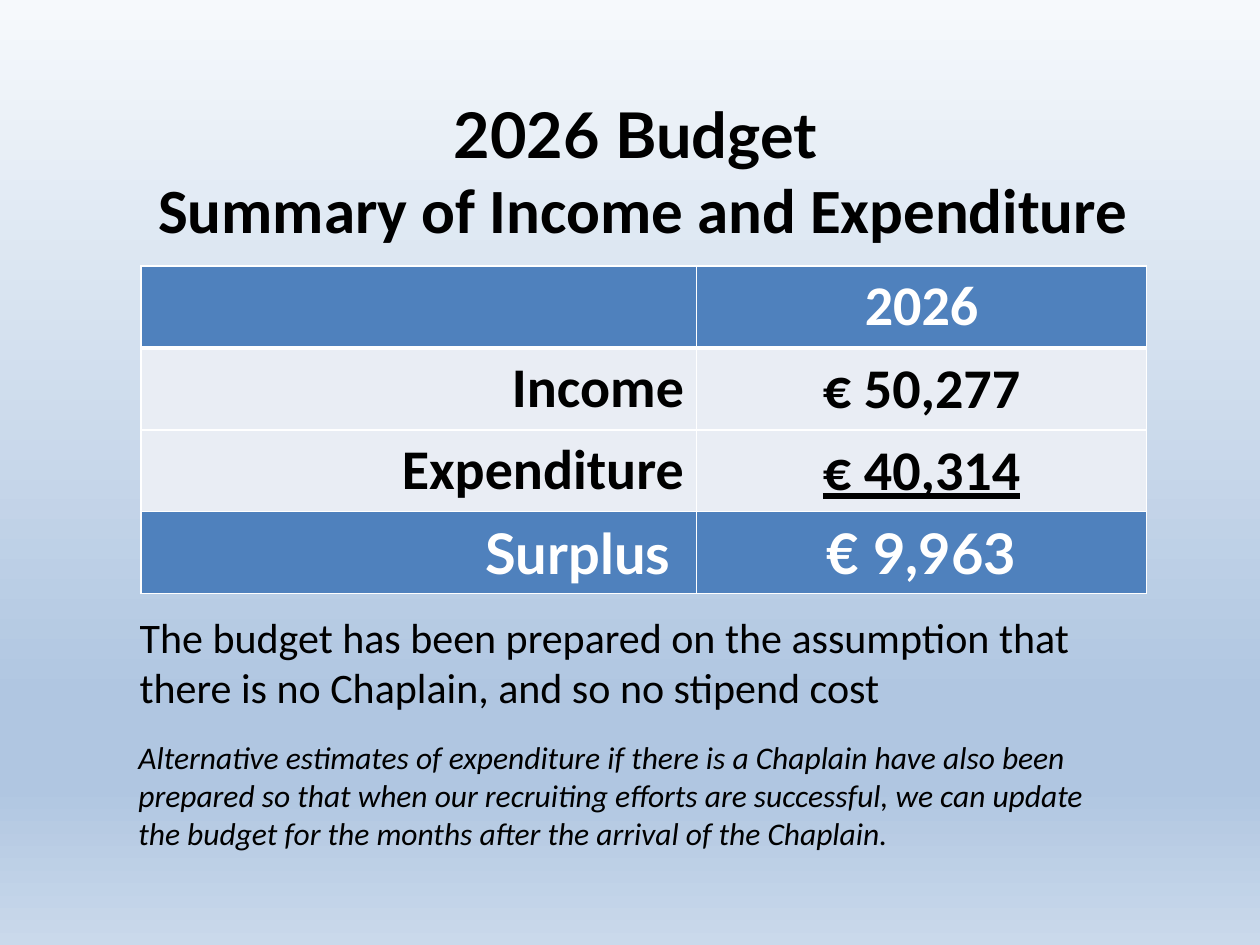
from lxml.etree import SubElement
from pptx import Presentation
from pptx.dml.color import RGBColor
from pptx.enum.text import MSO_ANCHOR, PP_ALIGN
from pptx.oxml import parse_xml
from pptx.oxml.ns import nsdecls, qn
from pptx.util import Pt

BLACK = RGBColor(0x00, 0x00, 0x00)
WHITE = RGBColor(0xFF, 0xFF, 0xFF)
BLUE = RGBColor(0x4F, 0x81, 0xBD)
PALE = RGBColor(0xE9, 0xED, 0xF4)
SKY = RGBColor(0xF6, 0xF9, 0xFC)
MIST = RGBColor(0xB0, 0xC6, 0xE1)
HAZE = RGBColor(0xCA, 0xD9, 0xEB)


def style(p, size, name, color, bold=False, italic=False, underline=False):
    for r in p.runs:
        r.font.size = Pt(size)
        r.font.name = name
        r.font.color.rgb = color
        r.font.bold = bold
        r.font.italic = italic
        r.font.underline = underline


def add_text(left, top, width, height, text):
    tf = s.shapes.add_textbox(Pt(left), Pt(top), Pt(width), Pt(height)).text_frame
    tf.word_wrap = True
    tf.text = text
    return tf


prs = Presentation()
prs.slide_width, prs.slide_height = Pt(720), Pt(540)
s = prs.slides.add_slide(prs.slide_layouts[6])

fill = s.background.fill
fill.gradient()
fill.gradient_angle = 270
stops = s.element.find(".//" + qn("a:gsLst"))
for stop in list(stops):
    stops.remove(stop)
for pos, color in [(0, SKY), (74, MIST), (83, MIST), (100, HAZE)]:
    gs = SubElement(stops, qn("a:gs"), pos=str(pos * 1000))
    SubElement(gs, qn("a:srgbClr"), val=str(color))

tf = add_text(42.5, 51, 650, 94.5, "2026 Budget \nSummary of Income and Expenditure")
for p, name in zip(tf.paragraphs, ["Lato", "Calibri"]):
    p.alignment = PP_ALIGN.CENTER
    style(p, 36, name, BLACK, bold=True)

rows = [
    ("", "2026", "Calibri", WHITE, BLUE),
    ("Income", "€ 50,277", "Calibri", BLACK, PALE),
    ("Expenditure", "€ 40,314", "Calibri", BLACK, PALE),
    ("Surplus ", "€ 9,963", "Lato", WHITE, BLUE),
]
table = s.shapes.add_table(4, 2, Pt(80.64), Pt(152), Pt(574.6), Pt(187.2)).table
table.columns[0].width, table.columns[1].width = Pt(317.5), Pt(257.1)
for i, (label, amount, name, color, back) in enumerate(rows):
    table.rows[i].height = Pt(46.8)
    for j, text in enumerate([label, amount]):
        cell = table.cell(i, j)
        cell.text = text
        cell.fill.solid()
        cell.fill.fore_color.rgb = back
        p = cell.text_frame.paragraphs[0]
        p.alignment = PP_ALIGN.CENTER if j else PP_ALIGN.RIGHT
        style(p, 32, name, color, bold=True, underline=text == "€ 40,314")
        if i:
            cell.vertical_anchor = MSO_ANCHOR.MIDDLE
            if j:
                cell.margin_left = cell.margin_right = cell.margin_top = Pt(0.7)
                cell.margin_bottom = Pt(0)
        tcPr = cell._tc.get_or_add_tcPr()
        for k, side in enumerate("LRTB"):
            width = Pt(3) if (i, side) in [(0, "B"), (1, "T")] else Pt(1)
            tcPr.insert(k, parse_xml(
                f'<a:ln{side} {nsdecls("a")} w="{width}"><a:solidFill>'
                f'<a:srgbClr val="{WHITE}"/></a:solidFill></a:ln{side}>'))

tf = add_text(72.7, 345.6, 574.6, 65.5,
              "The budget has been prepared on the assumption that there is no Chaplain, "
              "and so no stipend cost")
style(tf.paragraphs[0], 24, "Calibri", BLACK)

tf = add_text(72, 418.3, 574.6, 72.7,
              "Alternative estimates of expenditure if there is a Chaplain have also been "
              "prepared so that when our recruiting efforts are successful, we can update "
              "the budget for the months after the arrival of the Chaplain.")
style(tf.paragraphs[0], 18, "Calibri", BLACK, italic=True)

prs.save("out.pptx")
